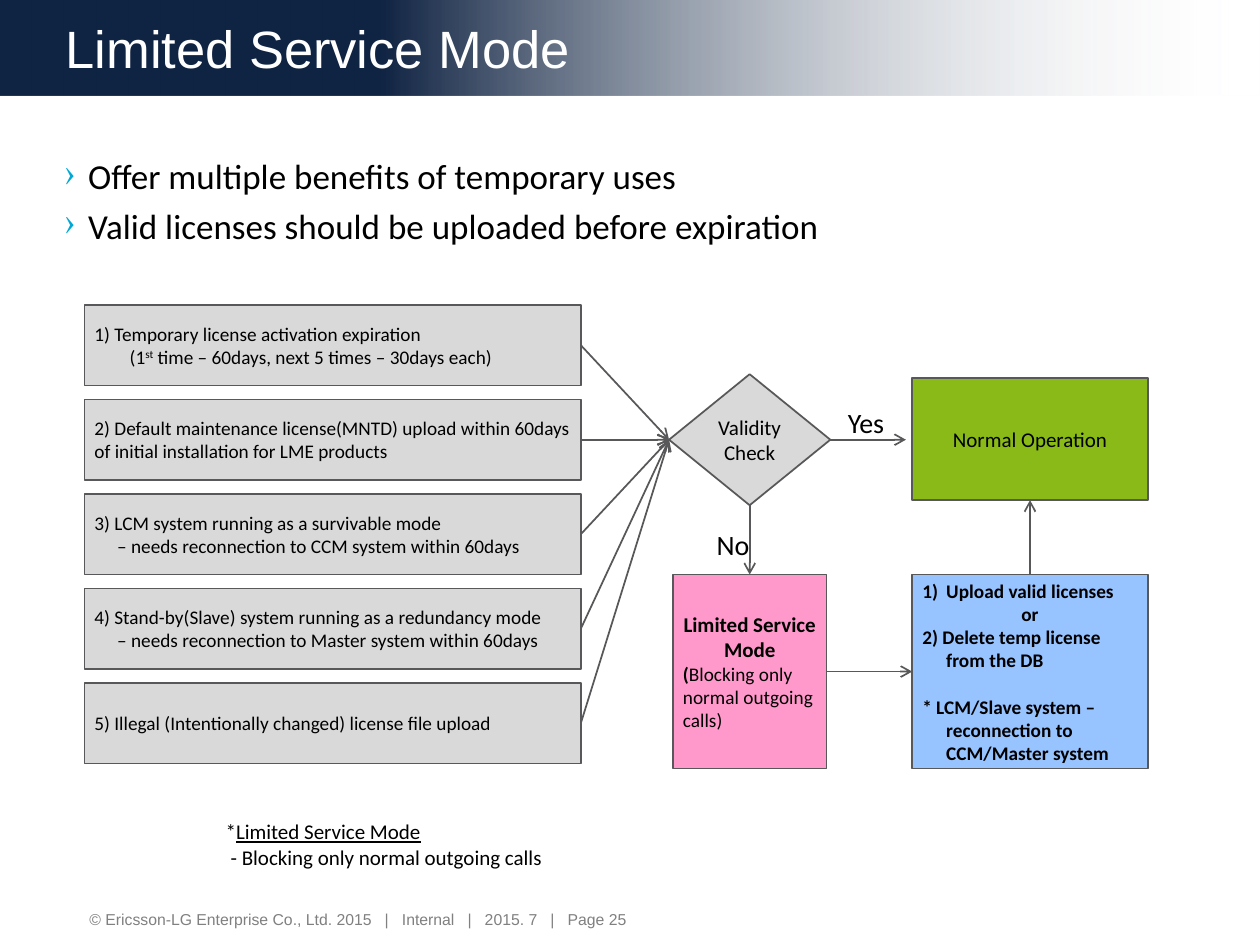
from dataclasses import dataclass

from lxml import etree
from pptx import Presentation
from pptx.dml.color import RGBColor
from pptx.enum import shapes, text as t
from pptx.oxml.ns import qn
from pptx.util import Inches, Pt


@dataclass(frozen=True)
class Theme:
    """Colours, fonts and type sizes of the slide."""
    navy: str = "0F2342"
    white: str = "FFFFFF"
    black: str = "000000"
    grey: str = "808080"
    edge: str = "58585A"
    pale: str = "D9D9D9"
    green: str = "89BA17"
    pink: str = "FF99CC"
    blue: str = "97C3FF"
    cyan: str = "00A9D4"
    body: str = "Calibri"
    head: str = "Arial"
    title: int = 30
    point: int = 20
    label: int = 16
    node: int = 12
    small: int = 11
    foot: int = 9


THEME = Theme()
RECT = shapes.MSO_SHAPE.RECTANGLE
CENTER = t.PP_ALIGN.CENTER
HANG = 0.19
PAD = (0.08, 0.05, 0.08, 0.05)


def rgb(code):
    """Turn a hex code into a colour."""
    return RGBColor.from_string(code)


def inset(frame, pads):
    """Set the left, top, right and bottom margins of a text frame."""
    sides = ("margin_left", "margin_top", "margin_right", "margin_bottom")
    for side, pad in zip(sides, pads):
        setattr(frame, side, Inches(pad))


def write(shape, text, size=THEME.small, color=THEME.black, face=THEME.body,
          bold=False, align=t.PP_ALIGN.LEFT, left=0, hang=0, gap=0, mark=None):
    """Add a paragraph; text is a string or a list of (string, format) runs."""
    frame = shape.text_frame
    para = frame.paragraphs[0]
    if para.runs:
        para = frame.add_paragraph()
    para.alignment = align
    para.space_before = Pt(gap)
    props = para._p.get_or_add_pPr()
    props.set("marL", str(Inches(left + hang)))
    props.set("indent", str(-Inches(hang)))
    if mark == "1)":
        etree.SubElement(props, qn("a:buAutoNum"), type="arabicParenR")
    elif mark:
        tint = etree.SubElement(props, qn("a:buClr"))
        etree.SubElement(tint, qn("a:srgbClr"), val=THEME.cyan)
        etree.SubElement(props, qn("a:buChar"), char=mark)
    for part, style in [(text, {})] if isinstance(text, str) else text:
        run = para.add_run()
        run.text = part
        font = run.font
        font.size, font.name = Pt(size), face
        font.bold = style.get("bold", bold)
        font.underline = style.get("under", False)
        font.color.rgb = rgb(color)
        if "base" in style:
            run._r.get_or_add_rPr().set("baseline", str(style["base"] * 1000))


def label(slide, box, pads=PAD, wrap=True):
    """Add an empty text box."""
    shape = slide.shapes.add_textbox(*map(Inches, box))
    shape.text_frame.word_wrap = wrap
    inset(shape.text_frame, pads)
    return shape


def node(slide, box, fill, kind=RECT, pads=PAD):
    """Add a filled, outlined shape with its text in the middle."""
    shape = slide.shapes.add_shape(kind, *map(Inches, box))
    shape.shadow.inherit = False
    shape.fill.solid()
    shape.fill.fore_color.rgb = rgb(fill)
    shape.line.color.rgb = rgb(THEME.edge)
    shape.line.width = Pt(1)
    frame = shape.text_frame
    frame.word_wrap = True
    frame.vertical_anchor = t.MSO_ANCHOR.MIDDLE
    inset(frame, pads)
    return shape


def arrow(slide, start, out, end=None, into=None, tip=(0, 0)):
    """Draw an arrow from a side of one shape to another shape or a point."""
    line = slide.shapes.add_connector(
        shapes.MSO_CONNECTOR.STRAIGHT, 0, 0, *map(Inches, tip))
    line.begin_connect(start, out)
    if end is not None:
        line.end_connect(end, into)
    line.line.color.rgb = rgb(THEME.edge)
    line.line.width = Pt(1)
    etree.SubElement(line.line._get_or_add_ln(), qn("a:tailEnd"), type="arrow")
    etree.SubElement(line.element.spPr, qn("a:effectLst"))


def banner(slide, box):
    """Place the title on a band that fades out to the right."""
    band = node(slide, box, THEME.navy, pads=(0.52, 0.05, 0.1, 0.05))
    band.line.fill.background()
    band.fill.gradient()
    band.fill.gradient_angle = 0
    stops = zip(band.fill.gradient_stops, (0.3, 1), (THEME.navy, THEME.white))
    for stop, place, color in stops:
        stop.position = place
        stop.color.rgb = rgb(color)
    fade = list(band.element.iter(qn("a:srgbClr")))[-1]
    etree.SubElement(fade, qn("a:alpha"), val="0")
    write(band, "Limited Service Mode", size=THEME.title, color=THEME.white,
          face=THEME.head)


def points(slide, box):
    """Place the two bullet points."""
    area = label(slide, box, (0.08, 0, 0.08, 0))
    style = dict(size=THEME.point, hang=HANG, mark="›")
    write(area, "Offer multiple benefits of temporary uses", **style)
    write(area, "Valid licenses should be uploaded before expiration", gap=4, **style)


def causes(slide, box):
    """Stack the five causes evenly and return their shapes."""
    x, y, w, h = box
    items = [
        ("1) Temporary license activation expiration",
         [("(1", {}), ("st", {"base": 30}),
          (" time – 60days, next 5 times – 30days each)", {})], 0.28),
        ("2) Default maintenance license(MNTD) upload within 60days of initial "
         "installation for LME products", None, 0),
        ("3) LCM system running as a survivable mode",
         "– needs reconnection to CCM system within 60days", 0.18),
        ("4) Stand-by(Slave) system running as a redundancy mode",
         "– needs reconnection to Master system within 60days", 0.18),
        ("5) Illegal (Intentionally changed) license file upload", None, 0),
    ]
    tall = 0.64
    step = (h - tall) / (len(items) - 1)
    stack = []
    for i, (main, more, left) in enumerate(items):
        cause = node(slide, (x, y + i * step, w, tall), THEME.pale)
        write(cause, main)
        if more:
            write(cause, more, left=left)
        stack.append(cause)
    return stack


def flow(slide, box, stack):
    """Place the check, its two outcomes and the arrows between them."""
    x, y, w, h = box
    wide, tall = 1.87, 1.54
    right, low = x + w - wide, y + h - tall
    check = node(slide, (x, y, 1.28, 1.04), THEME.pale,
                 shapes.MSO_SHAPE.DIAMOND, (0, 0, 0, 0))
    write(check, "Validity Check", size=THEME.node, align=CENTER)
    normal = node(slide, (right, y + 0.03, wide, 0.97), THEME.green)
    write(normal, "Normal Operation", size=THEME.node, align=CENTER)

    limit = node(slide, (x + 0.03, low, 1.22, tall), THEME.pink)
    write(limit, "Limited Service Mode", size=THEME.node, bold=True, align=CENTER)
    write(limit, [("(", {"bold": True}),
                  ("Blocking only normal outgoing calls)", {})])

    remedy = node(slide, (right, low, wide, tall), THEME.blue)
    write(remedy, "Upload valid licenses", bold=True, hang=HANG, mark="1)")
    write(remedy, "or", bold=True, align=CENTER)
    write(remedy, "2) Delete temp license from the DB", bold=True, hang=HANG)
    write(remedy, "* LCM/Slave system – reconnection to CCM/Master system",
          bold=True, hang=HANG, gap=13.4)

    for cause in stack:
        arrow(slide, cause, 3, check, 1)
    arrow(slide, check, 3, tip=(right - 0.05, y + 0.52))
    arrow(slide, check, 2, limit, 0)
    arrow(slide, limit, 3, remedy, 1)
    arrow(slide, remedy, 0, normal, 2)
    for word, dx, dy, size in (("No", 0.28, 1.17, 0.47), ("Yes", 1.32, 0.2, 0.51)):
        tag = label(slide, (x + dx, y + dy, size, 0.37), (0.1, 0.05, 0.1, 0.05), False)
        write(tag, word, size=THEME.label)


def note(slide, box):
    """Place the remark below the diagram."""
    area = label(slide, box, (0.09, 0.04, 0.09, 0.04))
    write(area, [("*", {}), ("Limited Service Mode", {"under": True})],
          size=THEME.node)
    write(area, "- Blocking only normal outgoing calls", size=THEME.node, left=0.04)


def footer(slide, box):
    """Place the copyright and page line."""
    write(label(slide, box),
          "© Ericsson-LG Enterprise Co., Ltd. 2015   |   Internal   |   2015. 7   |   Page 25",
          size=THEME.foot, color=THEME.grey, face=THEME.head)


def main():
    """Build the slide and save it."""
    deck = Presentation()
    deck.slide_width, deck.slide_height = Inches(10), Inches(7.5)
    slide = deck.slides.add_slide(deck.slide_layouts[6])
    footer(slide, (0.63, 7.17, 5.92, 0.28))
    banner(slide, (0, 0, 10, 0.76))
    points(slide, (0.43, 1.23, 9.13, 1.29))
    note(slide, (1.7, 6.46, 3.62, 0.49))
    stack = causes(slide, (0.67, 2.42, 3.94, 3.64))
    flow(slide, (5.31, 2.97, 3.8, 3.13), stack)
    deck.save("out.pptx")


if __name__ == "__main__":
    main()
